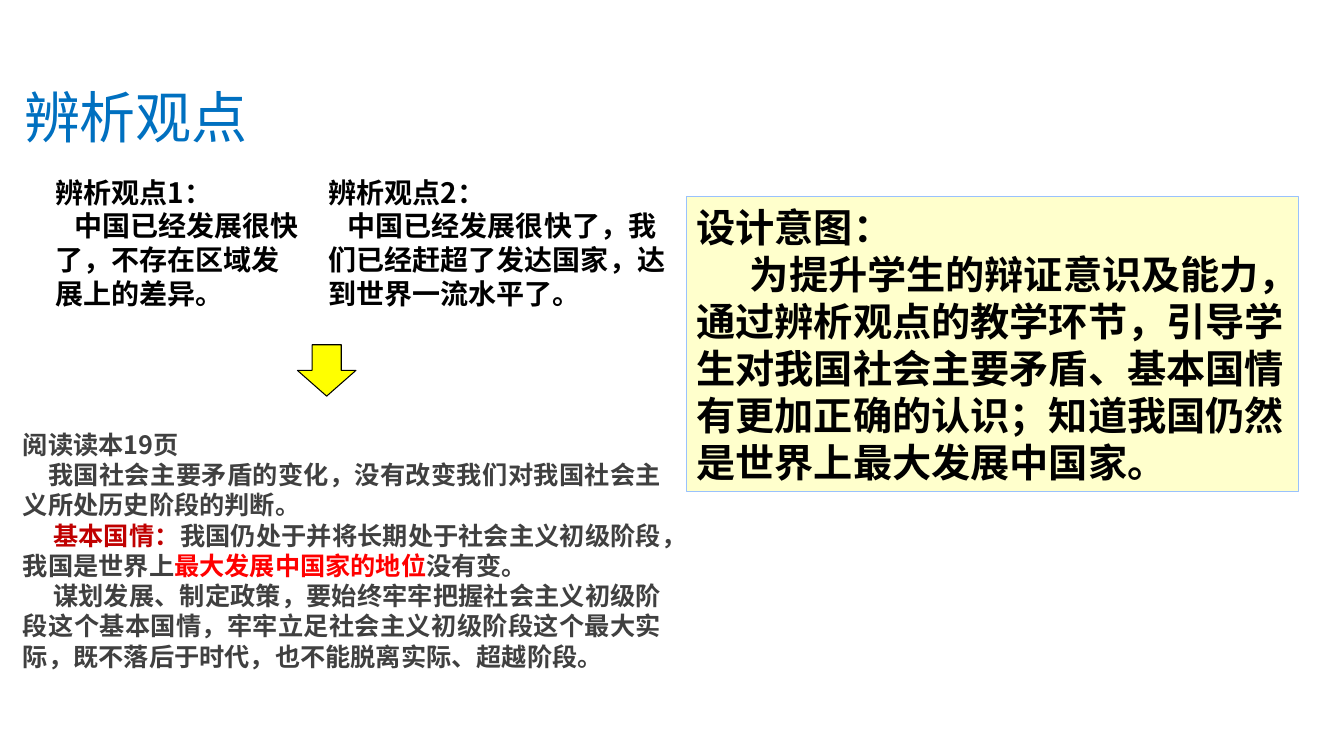
"""Build the slide on weighing two viewpoints about national development."""
from lxml.etree import SubElement
from pptx import Presentation
from pptx.dml.color import RGBColor
from pptx.enum.shapes import MSO_SHAPE as Preset
from pptx.enum.text import PP_ALIGN as Align
from pptx.oxml.ns import qn
from pptx.util import Inches, Pt

THEME = {
    "font": "Noto Sans CJK SC",
    "title": "0070C0", "ink": "000000", "grey": "404040",
    "dark_red": "C00000", "red": "FF0000",
    "panel": "FFFFCC", "panel_line": "99C2FD", "arrow": "FFFF00",
    "title_size": 40, "intent_size": 28, "view_size": 20, "reading_size": 18,
}

TITLE = [(0, ["辨析观点"])]
INTENT = [
    (0, ["设计意图："]),
    (0.53, ["为提升学生的辩证意识及能力，通过辨析观点的教学环节，引导学生对我国社会主要矛盾、"
            "基本国情有更加正确的认识；知道我国仍然是世界上最大发展中国家。"]),
]
VIEWS = [
    (0.45, 2.68, "辨析观点1：", "中国已经发展很快了，不存在区域发展上的差异。"),
    (3.16, 3.59, "辨析观点2：", "中国已经发展很快了，我们已经赶超了发达国家，达到世界一流水平了。"),
]
READING = [
    (0, ["阅读读本19页"]),
    (0.25, ["我国社会主要矛盾的变化，没有改变我们对我国社会主义所处历史阶段的判断。"]),
    (0.3, [("基本国情：", "dark_red"),
           "我国仍处于并将长期处于社会主义初级阶段，我国是世界上",
           ("最大发展中国家的地位", "red"),
           "没有变。"]),
    (0.3, ["谋划发展、制定政策，要始终牢牢把握社会主义初级阶段这个基本国情，"
           "牢牢立足社会主义初级阶段这个最大实际，既不落后于时代，也不能脱离实际、超越阶段。"]),
]


def color(name):
    return RGBColor.from_string(THEME[name])


def write(shape, paragraphs, size, ink="ink", bold=True, align=Align.LEFT):
    frame = shape.text_frame
    frame.word_wrap = True
    for index, (indent, runs) in enumerate(paragraphs):
        paragraph = frame.paragraphs[0] if index == 0 else frame.add_paragraph()
        paragraph.alignment = align
        paragraph._p.get_or_add_pPr().set("indent", str(Inches(indent)))
        for part in runs:
            text, tint = (part, ink) if isinstance(part, str) else part
            run = paragraph.add_run()
            run.text = text
            run.font.size = Pt(THEME[size])
            run.font.bold = bold
            run.font.color.rgb = color(tint)
            run.font.name = THEME["font"]
            SubElement(run.font._element, qn("a:ea"), typeface=THEME["font"])


def add_text(slide, box, paragraphs, size, **style):
    shape = slide.shapes.add_textbox(*map(Inches, box))
    write(shape, paragraphs, size, **style)


def add_block(slide, preset, box, fill, line, width):
    shape = slide.shapes.add_shape(preset, *map(Inches, box))
    shape.shadow.inherit = False
    shape.fill.solid()
    shape.fill.fore_color.rgb = color(fill)
    shape.line.color.rgb = color(line)
    shape.line.width = Pt(width)
    return shape


def main():
    presentation = Presentation()
    presentation.slide_width, presentation.slide_height = Inches(13.33), Inches(7.5)
    slide = presentation.slides.add_slide(presentation.slide_layouts[6])

    panel = add_block(slide, Preset.RECTANGLE, (6.81, 1.95, 6.07, 2.93),
                      "panel", "panel_line", 0.5)
    write(panel, INTENT, "intent_size")
    add_text(slide, (0.14, 0.77, 9.63, 0.77), TITLE, "title_size", ink="title", bold=False)
    add_block(slide, Preset.DOWN_ARROW, (2.95, 3.42, 0.58, 0.51), "arrow", "ink", 0.75)
    for left, width, heading, claim in VIEWS:
        add_text(slide, (left, 1.69, width, 1.45),
                 [(0, [heading]), (0.19, [claim])], "view_size")
    add_text(slide, (0.13, 4.21, 6.53, 2.52), READING, "reading_size",
             ink="grey", align=Align.JUSTIFY)
    presentation.save("out.pptx")


if __name__ == "__main__":
    main()
